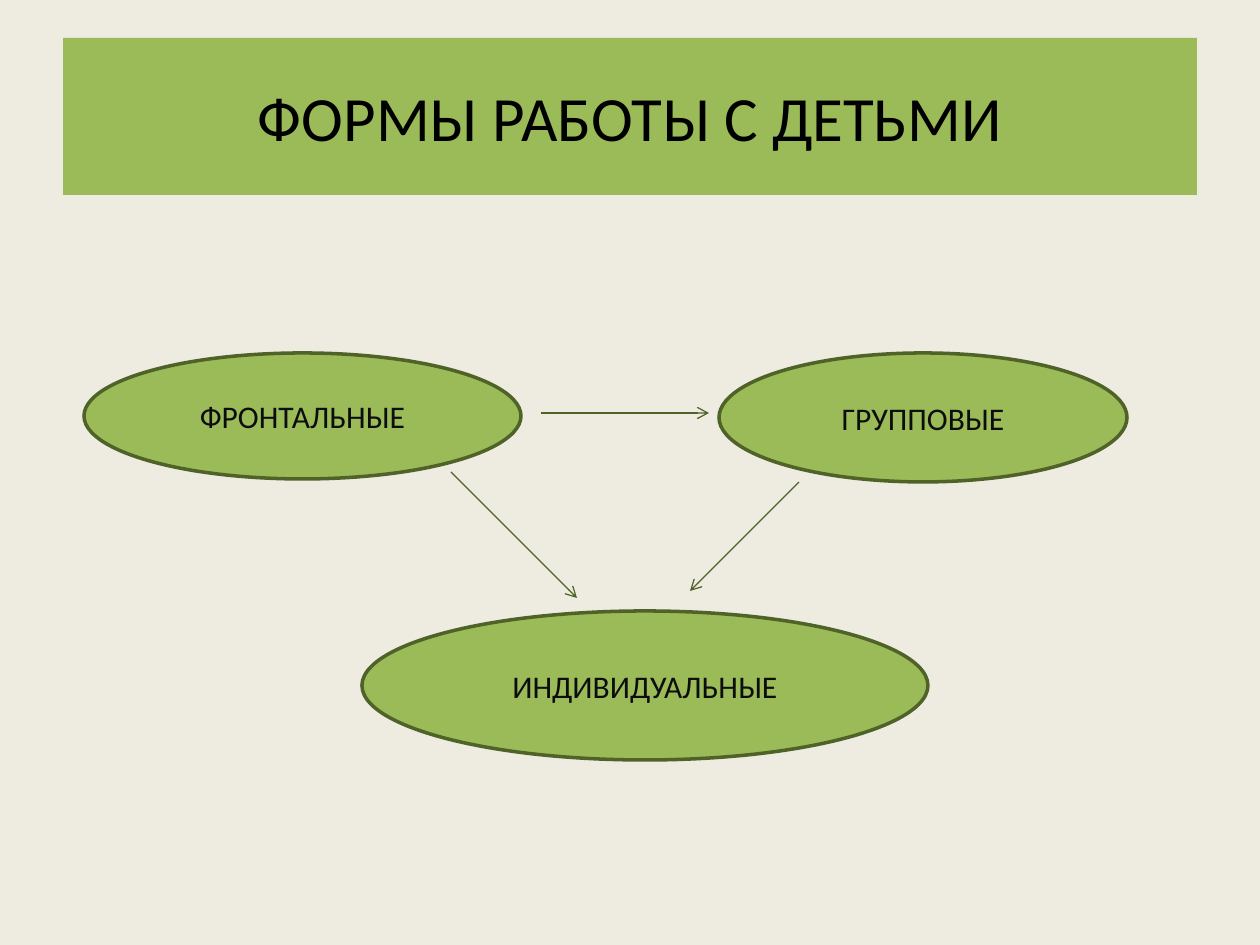
import pptx
import pptx.util
import pptx.dml.color
import pptx.enum.shapes
import pptx.enum.text
import pptx.oxml.ns
import lxml.etree

BEIGE = pptx.dml.color.RGBColor(0xEE, 0xEC, 0xE1)
GREEN = pptx.dml.color.RGBColor(0x9B, 0xBB, 0x59)
DARK_GREEN = pptx.dml.color.RGBColor(0x4F, 0x62, 0x28)
BLACK = pptx.dml.color.RGBColor(0, 0, 0)
NEAR_BLACK = pptx.dml.color.RGBColor(0x0D, 0x0D, 0x0D)


def px(*lengths):
    return [pptx.util.Emu(round(n * 914400 / 126)) for n in lengths]


def write(sp, text, size, color):
    tf = sp.text_frame
    tf.word_wrap = True
    tf.auto_size = pptx.enum.text.MSO_AUTO_SIZE.NONE
    tf.vertical_anchor = pptx.enum.text.MSO_ANCHOR.MIDDLE
    p = tf.paragraphs[0]
    p.text = text
    p.alignment = pptx.enum.text.PP_ALIGN.CENTER
    p.font.name = "Calibri"
    p.font.size = pptx.util.Pt(size)
    p.font.color.rgb = color


prs = pptx.Presentation()
prs.slide_width, prs.slide_height = px(1260, 945)
s = prs.slides.add_slide(prs.slide_layouts[5])
s.background.fill.solid()
s.background.fill.fore_color.rgb = BEIGE

# Title band
title = s.shapes.title
title.left, title.top, title.width, title.height = px(63, 38, 1134, 157)
title.fill.solid()
title.fill.fore_color.rgb = GREEN
write(title, "ФОРМЫ РАБОТЫ С ДЕТЬМИ", 36, BLACK)

# Forms of work
forms = [
    ("ФРОНТАЛЬНЫЕ", 84, 353, 437, 126),
    ("ГРУППОВЫЕ", 719, 353, 408, 129),
    ("ИНДИВИДУАЛЬНЫЕ", 362, 611, 566, 149),
]
for text, *box in forms:
    sp = s.shapes.add_shape(pptx.enum.shapes.MSO_SHAPE.OVAL, *px(*box))
    sp.shadow.inherit = False
    sp.fill.solid()
    sp.fill.fore_color.rgb = GREEN
    sp.line.color.rgb = DARK_GREEN
    sp.line.width = pptx.util.Pt(2)
    write(sp, text, 18, NEAR_BLACK)

# Arrows between the forms
arrows = [(451, 472, 577, 598), (541, 413, 709, 413), (799, 482, 690, 591)]
for ends in arrows:
    arrow = s.shapes.add_connector(
        pptx.enum.shapes.MSO_CONNECTOR.STRAIGHT, *px(*ends))
    arrow.line.color.rgb = DARK_GREEN
    arrow.line.width = pptx.util.Pt(0.75)
    ln = arrow.line._get_or_add_ln()
    lxml.etree.SubElement(ln, pptx.oxml.ns.qn("a:tailEnd"), type="arrow")
    lxml.etree.SubElement(arrow._element.spPr, pptx.oxml.ns.qn("a:effectLst"))

prs.save("out.pptx")
